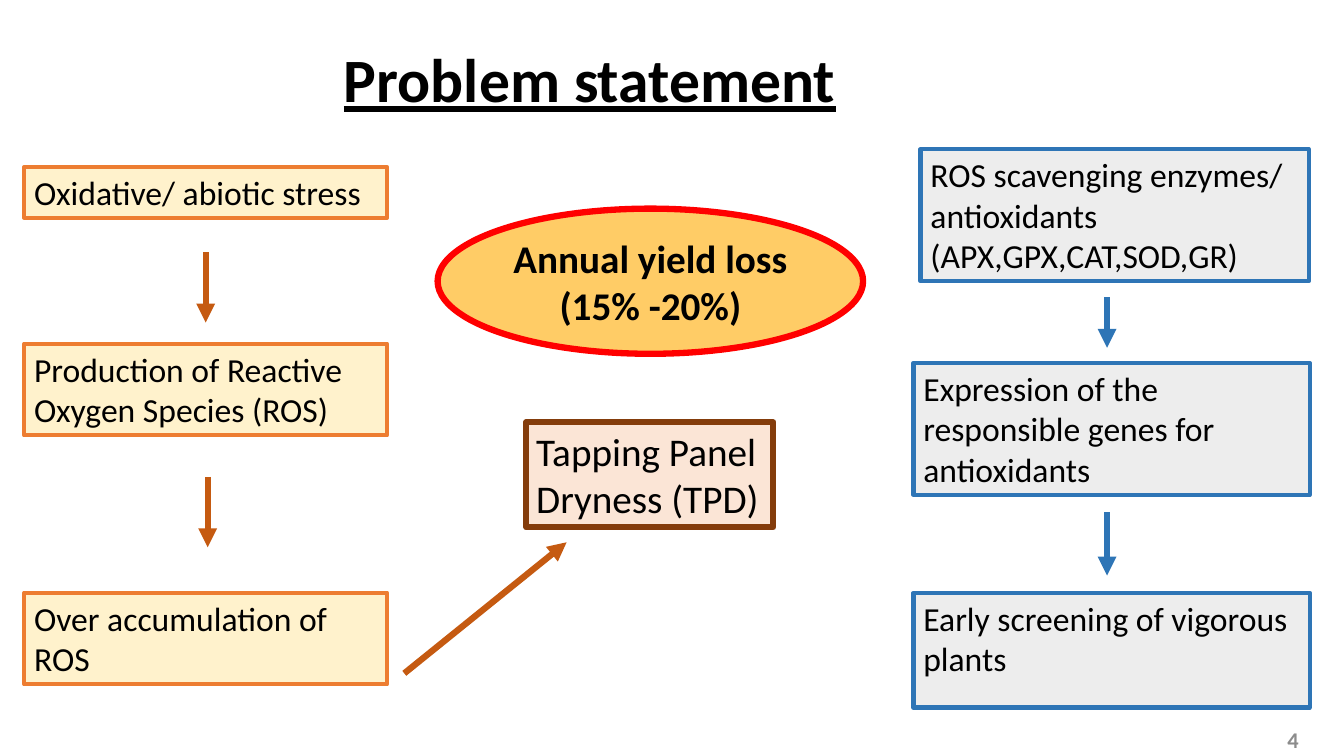
from dataclasses import dataclass

from pptx import Presentation, util as u
from pptx.dml.color import RGBColor
from pptx.enum import shapes, text
from pptx.oxml import parse_xml
from pptx.oxml.ns import nsdecls

PX = 9144  # EMU per px, 100 px to the inch
BOX, OVAL = shapes.MSO_SHAPE.RECTANGLE, shapes.MSO_SHAPE.OVAL
LEFT, CENTER, RIGHT = text.PP_ALIGN.LEFT, text.PP_ALIGN.CENTER, text.PP_ALIGN.RIGHT
TOP, MIDDLE = text.MSO_ANCHOR.TOP, text.MSO_ANCHOR.MIDDLE


@dataclass(frozen=True)
class Theme:
    font: str = "Calibri"
    ink: str = "000000"
    muted: str = "8C8C8C"
    stress: tuple = ("FFF2CC", "ED7D31")  # fill, line
    defence: tuple = ("EDEDED", "2E75B6")
    loss: tuple = ("FFCC66", "FF0000")
    dryness: tuple = ("FBE5D6", "843C0B")
    stress_arrow: str = "C55A11"
    defence_arrow: str = "2E75B6"
    title: int = 44
    key: int = 28
    body: int = 24
    number: int = 16
    thin: float = 3
    thick: float = 4.5


class Deck:
    def __init__(self, theme):
        self.t = theme
        self.prs = Presentation()
        self.prs.slide_width, self.prs.slide_height = 1333 * PX, 750 * PX
        self.s = self.prs.slides.add_slide(self.prs.slide_layouts[5])

    def set_text(self, sp, lines, size, align=LEFT, anchor=TOP, color=None,
                 bold=False, underline=False):
        tf = sp.text_frame
        tf.word_wrap = True
        tf.auto_size = text.MSO_AUTO_SIZE.NONE
        tf.vertical_anchor = anchor
        for i, line in enumerate(lines):
            p = tf.add_paragraph() if i else tf.paragraphs[0]
            p.alignment = align
            r = p.add_run()
            r.text = line
            r.font.name, r.font.size = self.t.font, u.Pt(size)
            r.font.bold, r.font.underline = bold, underline
            r.font.color.rgb = RGBColor.from_string(color or self.t.ink)

    def title(self, x, y, w, h, line):
        sp = self.s.shapes.title
        sp.left, sp.top, sp.width, sp.height = (v * PX for v in (x, y, w, h))
        self.set_text(sp, [line], self.t.title, CENTER, bold=True, underline=True)

    def label(self, x, y, w, h, line):
        sp = self.s.shapes.add_textbox(*(v * PX for v in (x, y, w, h)))
        self.set_text(sp, [line], self.t.number, RIGHT, MIDDLE, self.t.muted, bold=True)

    def shape(self, kind, x, y, w, h, colors, weight, lines, size, **style):
        sp = self.s.shapes.add_shape(kind, *(v * PX for v in (x, y, w, h)))
        sp.shadow.inherit = False
        sp.fill.solid()
        sp.fill.fore_color.rgb = RGBColor.from_string(colors[0])
        sp.line.color.rgb = RGBColor.from_string(colors[1])
        sp.line.width = u.Pt(weight)
        self.set_text(sp, lines, size, **style)

    def arrow(self, x1, y1, x2, y2, color):
        c = self.s.shapes.add_connector(
            shapes.MSO_CONNECTOR.STRAIGHT, *(v * PX for v in (x1, y1, x2, y2)))
        c.line.color.rgb = RGBColor.from_string(color)
        c.line.width = u.Pt(self.t.thick)
        c.line._get_or_add_ln().append(
            parse_xml(f'<a:tailEnd {nsdecls("a")} type="triangle"/>'))
        c._element.spPr.append(parse_xml(f'<a:effectLst {nsdecls("a")}/>'))


def main():
    t = Theme()
    d = Deck(t)
    d.title(235, 36, 700, 84, "Problem statement")
    d.label(998, 714, 300, 40, "4")

    # Stress chain on the left
    for y, h, line in ((166, 50, "Oxidative/ abiotic stress"),
                       (341, 91, "Production of Reactive Oxygen Species (ROS)"),
                       (588, 91, "Over accumulation of ROS")):
        d.shape(BOX, 24, y, 360, h, t.stress, t.thin, [line], t.body)

    # Yield loss and panel dryness in the middle
    d.shape(OVAL, 434, 207, 422, 144, t.loss, t.thick,
            ["Annual yield loss", "(15% -20%)"], t.key,
            align=CENTER, anchor=MIDDLE, bold=True)
    d.shape(BOX, 522, 419, 245, 104, t.dryness, t.thick,
            ["Tapping Panel Dryness (TPD)"], t.key)

    # Defence chain on the right
    for x, y, w, h, line in (
            (913, 148, 385, 131, "ROS scavenging enzymes/ antioxidants (APX,GPX,CAT,SOD,GR)"),
            (906, 360, 393, 131, "Expression of the responsible genes for antioxidants"),
            (906, 588, 393, 114, "Early screening of vigorous plants")):
        d.shape(BOX, x, y, w, h, t.defence, t.thin, [line], t.body)

    # Arrows
    for ends in ((204, 250, 204, 320), (206, 473, 206, 543), (401, 668, 562, 538)):
        d.arrow(*ends, t.stress_arrow)
    for y1, y2 in ((295, 345), (508, 571)):
        d.arrow(1098, y1, 1098, y2, t.defence_arrow)

    d.prs.save("out.pptx")


if __name__ == "__main__":
    main()
